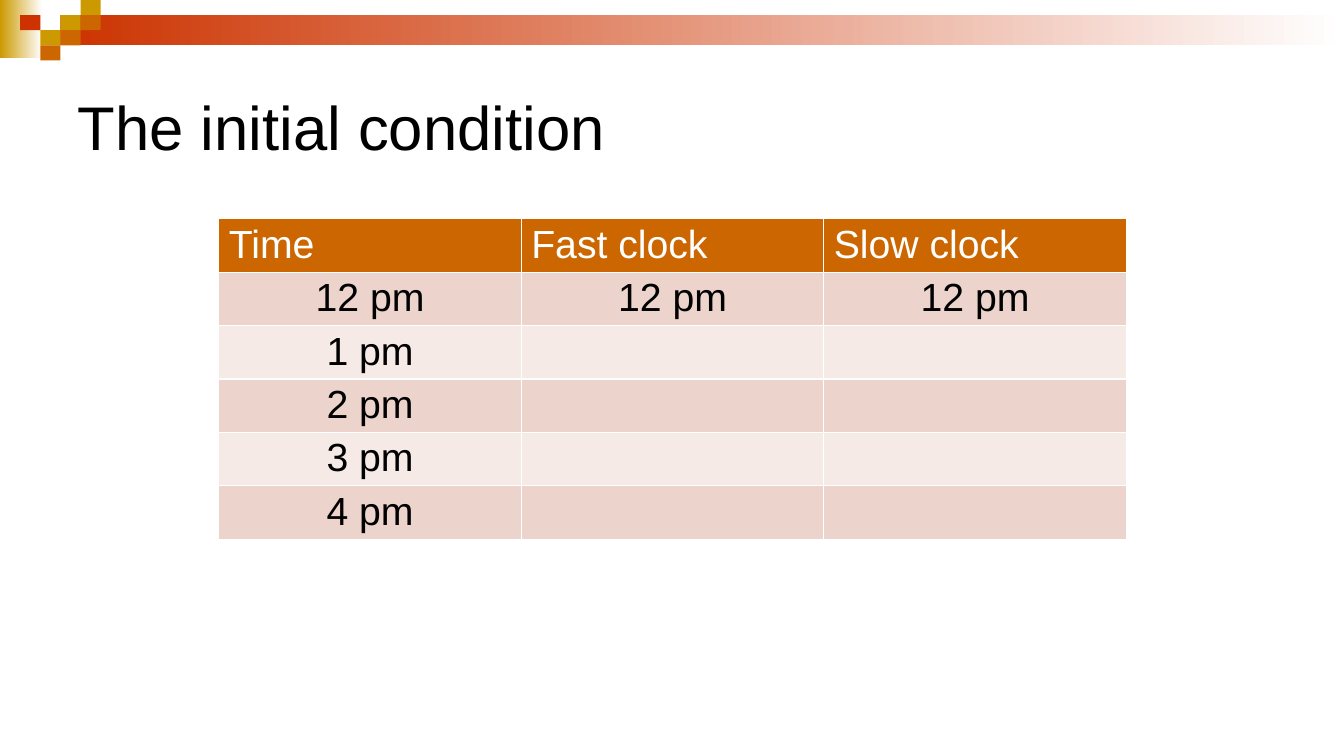
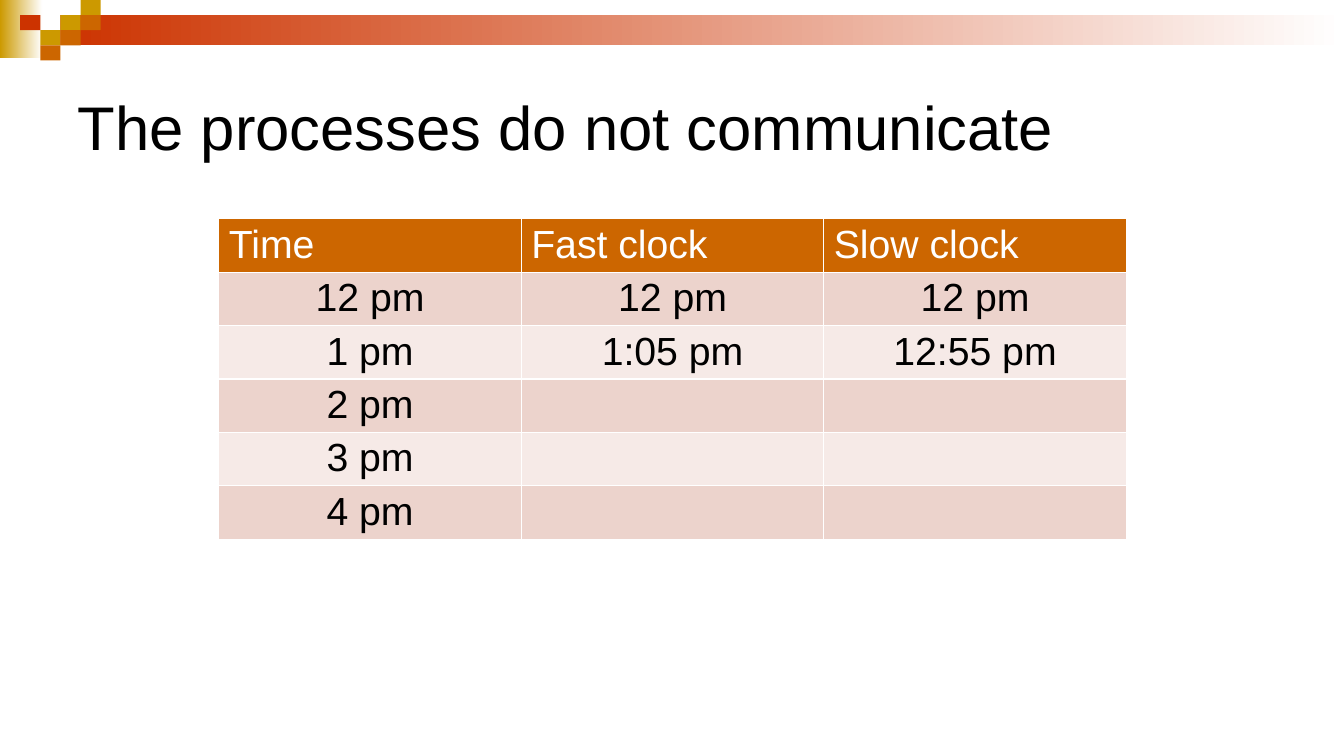
from lxml import etree
from pptx import Presentation
from pptx.dml.color import RGBColor
from pptx.enum.shapes import MSO_SHAPE
from pptx.enum.text import MSO_ANCHOR, PP_ALIGN
from pptx.oxml.ns import qn
from pptx.util import Inches, Pt

RECTANGLE = MSO_SHAPE.RECTANGLE
MIDDLE = MSO_ANCHOR.MIDDLE
LEFT, CENTER = PP_ALIGN.LEFT, PP_ALIGN.CENTER

FONT = "Arial"
BLACK, WHITE = "000000", "FFFFFF"
GOLD, ORANGE, RED = "CC9900", "CC6600", "CC3300"
ROW_FILLS = ("ECD3CC", "F6EAE7")

TILE_WIDTH, TILE_HEIGHT = 0.2, 0.15
# Column, row and colour of each mosaic tile
TILES = [
    (3, 1, GOLD), (4, 0, GOLD), (4, 1, ORANGE), (2, 2, GOLD),
    (1, 1, RED), (3, 2, ORANGE), (2, 3, ORANGE),
]

TITLE_ONLY = 5
COLUMN_WIDTH, ROW_HEIGHT = 3, 0.53
HEADINGS = ["Time", "Fast clock", "Slow clock"]
HOURS = ["12 pm", "1 pm", "2 pm", "3 pm", "4 pm"]


def color(hex_value):
    return RGBColor.from_string(hex_value)


def style_text(paragraph, size, hex_value, alignment):
    paragraph.alignment = alignment
    for run in paragraph.runs:
        run.font.name = FONT
        run.font.size = Pt(size)
        run.font.bold = False
        run.font.color.rgb = color(hex_value)


def add_block(slide, left, top, width, height, start, end=None):
    """Add a borderless rectangle, fading from start to end if end is given."""
    block = slide.shapes.add_shape(
        RECTANGLE, Inches(left), Inches(top), Inches(width), Inches(height))
    block.shadow.inherit = False
    block.line.fill.background()
    if end:
        block.fill.gradient()
        block.fill.gradient_angle = 0
        for stop, hex_value in zip(block.fill.gradient_stops, (start, end)):
            stop.color.rgb = color(hex_value)
    else:
        block.fill.solid()
        block.fill.fore_color.rgb = color(start)
    return block


def decorate_master(prs, slide):
    """Draw the header band on a slide, then move it to the master."""
    blocks = [
        add_block(slide, 0, 0, 0.42, 0.58, GOLD, WHITE),
        add_block(slide, 0.6, 0.15, 12.73, 0.3, RED, WHITE),
    ]
    for column, row, hex_value in TILES:
        blocks.append(add_block(
            slide, column * TILE_WIDTH, row * TILE_HEIGHT,
            TILE_WIDTH, TILE_HEIGHT, hex_value))
    for block in blocks:
        prs.slide_master.shapes.element.append(block.element)


def place_title(layout):
    title = layout.placeholders[0]
    title.left, title.top = Inches(0.67), Inches(0.5)
    title.width, title.height = Inches(12), Inches(1.5)
    title.text_frame.vertical_anchor = MIDDLE


def set_borders(cell):
    properties = cell._tc.get_or_add_tcPr()
    for index, side in enumerate(("a:lnL", "a:lnR", "a:lnT", "a:lnB")):
        line = etree.Element(qn(side), w=str(Pt(1)))
        fill = etree.SubElement(line, qn("a:solidFill"))
        etree.SubElement(fill, qn("a:srgbClr"), val=WHITE)
        properties.insert(index, line)


def fill_cell(cell, text, fill, text_color, alignment):
    cell.fill.solid()
    cell.fill.fore_color.rgb = color(fill)
    cell.margin_top = cell.margin_bottom = Inches(0.04)
    cell.text_frame.text = text
    style_text(cell.text_frame.paragraphs[0], 28, text_color, alignment)
    set_borders(cell)


def add_clock_table(slide, readings):
    """Add the hours with the (fast, slow) readings known so far."""
    rows = [HEADINGS]
    for index, hour in enumerate(HOURS):
        known = readings[index] if index < len(readings) else ("", "")
        rows.append([hour, *known])
    table = slide.shapes.add_table(
        len(rows), len(HEADINGS), Inches(2.17), Inches(2.17),
        Inches(COLUMN_WIDTH * len(HEADINGS)),
        Inches(ROW_HEIGHT * len(rows))).table
    for r, row in enumerate(rows):
        for c, text in enumerate(row):
            if r == 0:
                look = (ORANGE, WHITE, LEFT)
            else:
                look = (ROW_FILLS[(r - 1) % 2], BLACK, CENTER)
            fill_cell(table.cell(r, c), text, *look)


def add_clock_slide(prs, title, readings):
    slide = prs.slides.add_slide(prs.slide_layouts[TITLE_ONLY])
    slide.shapes.title.text_frame.text = title
    style_text(slide.shapes.title.text_frame.paragraphs[0], 44, BLACK, LEFT)
    add_clock_table(slide, readings)
    return slide


def main():
    prs = Presentation()
    prs.slide_width, prs.slide_height = Inches(13.33), Inches(7.5)
    place_title(prs.slide_layouts[TITLE_ONLY])

    start = ("12 pm", "12 pm")
    first = add_clock_slide(prs, "The initial condition", [start])
    decorate_master(prs, first)
    add_clock_slide(prs, "The processes do not communicate",
                    [start, ("1:05 pm", "12:55 pm")])
    prs.save("out.pptx")


if __name__ == "__main__":
    main()
